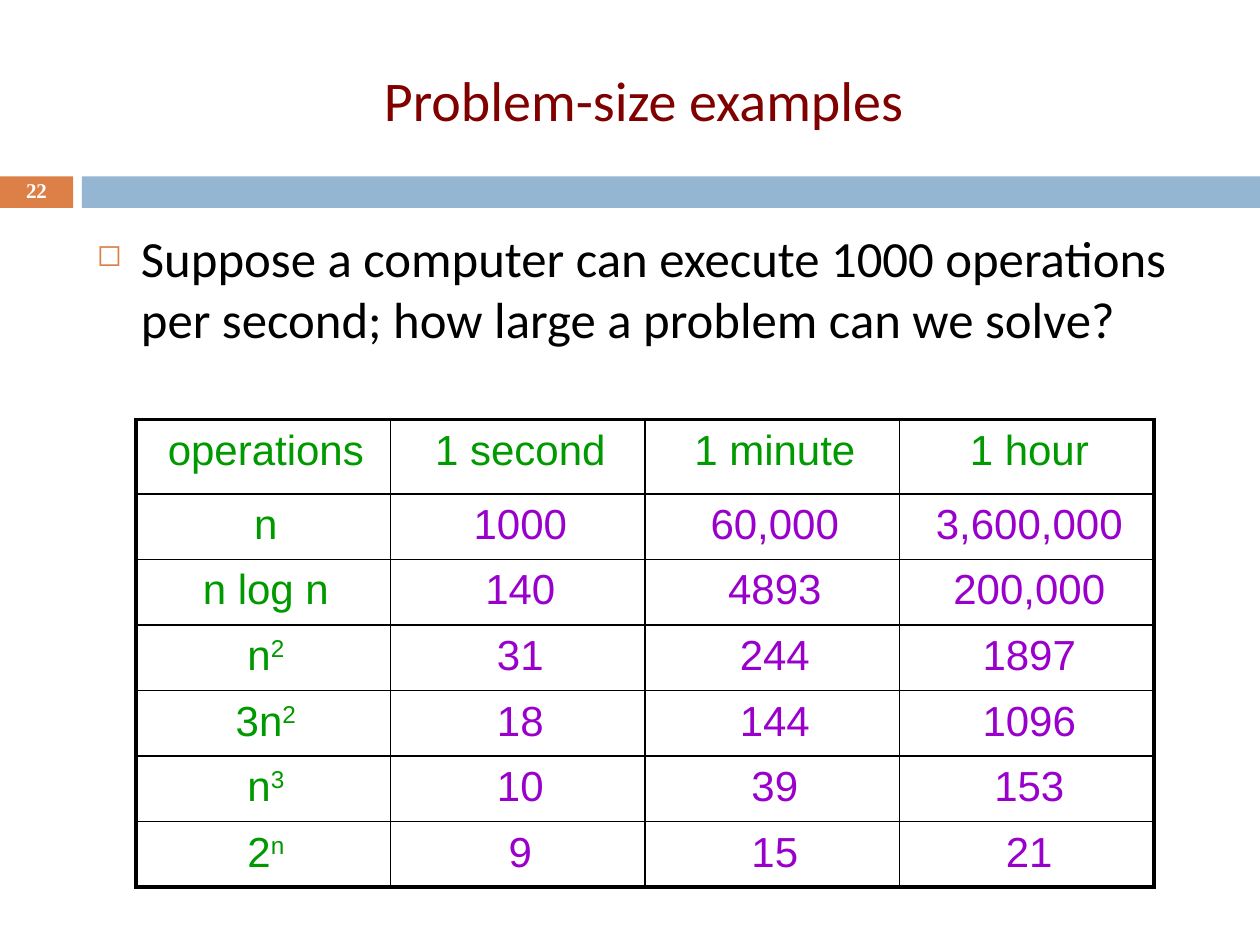
"""Build a slide on the problem sizes solvable at 1000 operations per second."""
import pptx
import pptx.dml.color
import pptx.enum.shapes
import pptx.enum.text
import pptx.oxml
import pptx.oxml.ns
import pptx.util
from pptx.util import Inches

THEME = {
    "title": {"size": 32, "font": "Calibri", "color": "800000"},
    "body": {"size": 29, "font": "Calibri", "color": "000000"},
    "number": {"size": 12, "font": "Times New Roman", "color": "FFFFFF", "bold": True},
    "label": {"size": 24, "font": "Arial", "color": "009900"},
    "value": {"size": 24, "font": "Arial", "color": "9900CC"},
    "orange": "DD8047",
    "blue": "94B6D2",
    "border": "000000",
    "outer": 2.25,
    "inner": 1,
}
CENTER = pptx.enum.text.PP_ALIGN.CENTER
MIDDLE = pptx.enum.text.MSO_ANCHOR.MIDDLE
NAMESPACE = pptx.oxml.ns.nsdecls("a")


def write_text(frame, text, size, font, color, bold=False, align=None, indent=0):
    """Fill the first paragraph; a caret starts a superscript."""
    paragraph = frame.paragraphs[0]
    paragraph.alignment = align
    paragraph._p.get_or_add_pPr().set("marL", str(Inches(indent)))
    for position, part in enumerate(text.split("^")):
        run = paragraph.add_run()
        run.text = part
        run.font.size = pptx.util.Pt(size)
        run.font.name = font
        run.font.bold = bold
        run.font.color.rgb = pptx.dml.color.RGBColor.from_string(color)
        if position:
            run.font._element.set("baseline", "30000")
    return paragraph


def add_text_box(slide, left, top, width, height, anchor, right_inset=0.1):
    """Add a wrapping text box and return its text frame."""
    box = slide.shapes.add_textbox(Inches(left), Inches(top), Inches(width), Inches(height))
    frame = box.text_frame
    frame.word_wrap = True
    frame.vertical_anchor = anchor
    frame.margin_right = Inches(right_inset)
    return frame


presentation = pptx.Presentation()
presentation.slide_width = Inches(10)
presentation.slide_height = Inches(7.5)
slide = presentation.slides.add_slide(presentation.slide_layouts[6])

for left, width, color in ((0, 0.58, THEME["orange"]), (0.65, 9.35, THEME["blue"])):
    band = slide.shapes.add_shape(
        pptx.enum.shapes.MSO_SHAPE.RECTANGLE,
        Inches(left), Inches(1.4), Inches(width), Inches(0.25))
    band.shadow.inherit = False
    band.fill.solid()
    band.fill.fore_color.rgb = pptx.dml.color.RGBColor.from_string(color)
    band.line.fill.background()

title = add_text_box(slide, 0.67, 0.25, 8.92, 1.08, MIDDLE, right_inset=0.14)
write_text(title, "Problem-size examples", align=CENTER, **THEME["title"])

number = add_text_box(slide, 0, 1.39, 0.58, 0.27, MIDDLE)
write_text(number, "22", align=CENTER, **THEME["number"]).line_spacing = 0.8

body = add_text_box(slide, 0.67, 1.75, 8.92, 4.92, pptx.enum.text.MSO_ANCHOR.TOP, right_inset=0.14)
question = write_text(
    body,
    "Suppose a computer can execute 1000 operations per second; how large a problem can we solve?",
    indent=0.35, **THEME["body"])
question.space_before = pptx.util.Pt(7)
properties = question._p.get_or_add_pPr()
properties.set("indent", str(Inches(-0.35)))
for bullet in (
    f'<a:buClr {NAMESPACE}><a:srgbClr val="{THEME["orange"]}"/></a:buClr>',
    f'<a:buSzPct {NAMESPACE} val="60000"/>',
    f'<a:buChar {NAMESPACE} char="◻"/>',
):
    properties.append(pptx.oxml.parse_xml(bullet))

rows = [
    ("operations", "1 second", "1 minute", "1 hour"),
    ("n", "1000", "60,000", "3,600,000"),
    ("n log n", "140", "4893", "200,000"),
    ("n^2", "31", "244", "1897"),
    ("3n^2", "18", "144", "1096"),
    ("n^3", "10", "39", "153"),
    ("2^n", "9", "15", "21"),
]
last_row, last_column = len(rows) - 1, len(rows[0]) - 1
table = slide.shapes.add_table(
    len(rows), len(rows[0]), Inches(1.08), Inches(3.33), Inches(8.08), Inches(3.65)).table
table.first_row = False
table.horz_banding = False
for column in table.columns:
    column.width = Inches(2.02)

for row_index, row in enumerate(rows):
    table.rows[row_index].height = Inches(0.51 if row_index else 0.59)
    for column_index, text in enumerate(row):
        cell = table.cell(row_index, column_index)
        cell.margin_left = cell.margin_right = Inches(0.06)
        cell.margin_top = cell.margin_bottom = Inches(0.06)
        is_label = row_index == 0 or column_index == 0
        style = THEME["label" if is_label else "value"]
        write_text(cell.text_frame, text, align=CENTER, indent=0.04, **style)
        outer_sides = {
            "L": column_index == 0,
            "R": column_index == last_column,
            "T": row_index == 0,
            "B": row_index == last_row,
        }
        for side, is_outer in outer_sides.items():
            width = pptx.util.Pt(THEME["outer" if is_outer else "inner"])
            cell._tc.get_or_add_tcPr().append(pptx.oxml.parse_xml(
                f'<a:ln{side} {NAMESPACE} w="{width}"><a:solidFill>'
                f'<a:srgbClr val="{THEME["border"]}"/></a:solidFill></a:ln{side}>'))
        cell.fill.background()

presentation.save("out.pptx")
